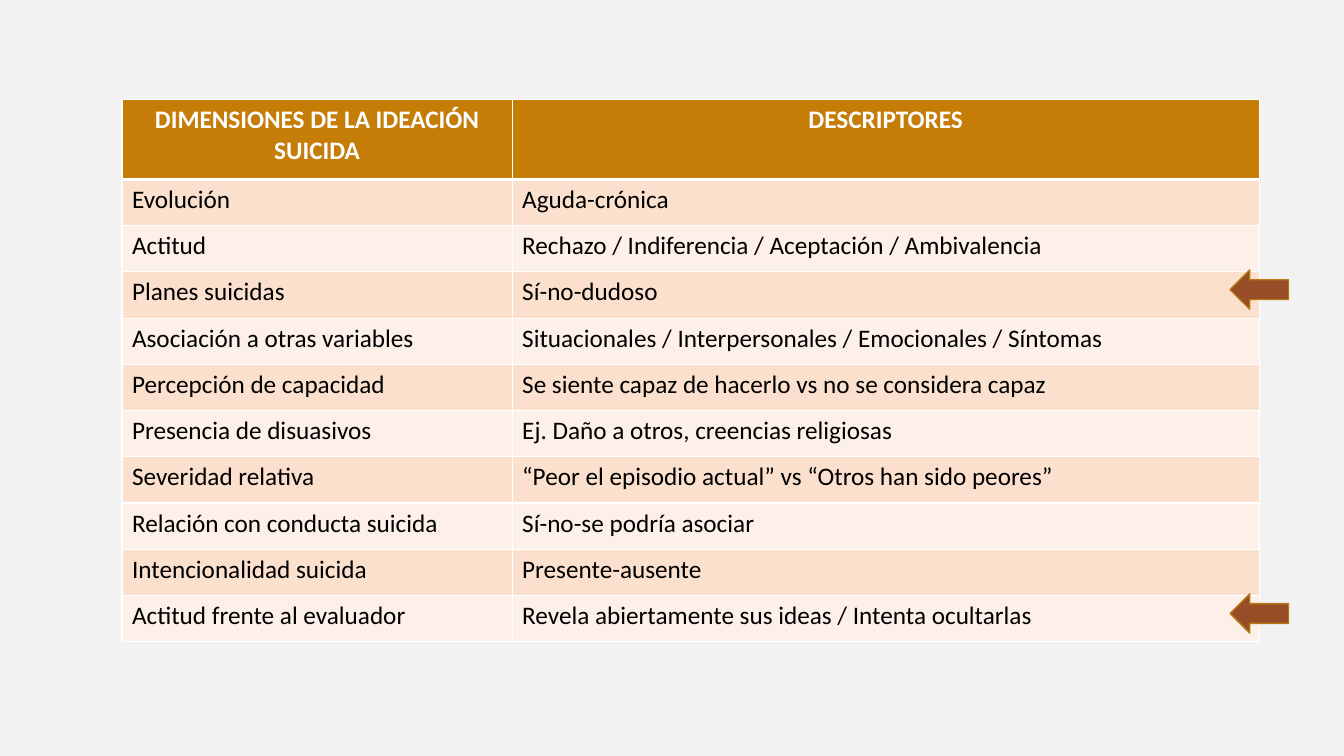
import pptx
import pptx.util
import pptx.dml.color
import pptx.enum.shapes
import pptx.enum.text
import pptx.oxml
import pptx.oxml.ns

HEAD = ("DIMENSIONES DE LA IDEACIÓN SUICIDA", "DESCRIPTORES")
ROWS = [
    ("Evolución", "Aguda-crónica"),
    ("Actitud", "Rechazo / Indiferencia / Aceptación / Ambivalencia"),
    ("Planes suicidas", "Sí-no-dudoso"),
    ("Asociación a otras variables", "Situacionales / Interpersonales / Emocionales / Síntomas"),
    ("Percepción de capacidad", "Se siente capaz de hacerlo vs no se considera capaz"),
    ("Presencia de disuasivos", "Ej. Daño a otros, creencias religiosas"),
    ("Severidad relativa", "“Peor el episodio actual” vs “Otros han sido peores”"),
    ("Relación con conducta suicida", "Sí-no-se podría asociar"),
    ("Intencionalidad suicida", "Presente-ausente"),
    ("Actitud frente al evaluador", "Revela abiertamente sus ideas / Intenta ocultarlas"),
]
MARKED = ("Planes suicidas", "Actitud frente al evaluador")
BANDS = ("FBE0CD", "FDF0E8")
COLS = (3.87, 7.41)
LEFT, TOP, HIGH, HEAD_H = 1.21, 0.99, 5.38, 0.79
ROW_H = (HIGH - HEAD_H) / len(ROWS)
BASE = {"name": "Calibri", "size": pptx.util.Pt(18)}
Inches = pptx.util.Inches


def paint(form, tint):
    form.solid()
    form.fore_color.rgb = pptx.dml.color.RGBColor.from_string(tint)


def edge(cell, side, width):
    line = pptx.oxml.parse_xml(
        f'<a:ln{side} {pptx.oxml.ns.nsdecls("a")} w="{pptx.util.Pt(width)}">'
        '<a:solidFill><a:srgbClr val="FFFFFF"/></a:solidFill>'
        f'</a:ln{side}>')
    cell._tc.get_or_add_tcPr().append(line)


def write(cell, text, row):
    head = row == 0
    for side in "LRTB":
        thick = (side == "B" and head) or (side == "T" and row == 1)
        edge(cell, side, 3 if thick else 1)
    paint(cell.fill, "C67D08" if head else BANDS[(row - 1) % 2])
    cell.text = text
    para = cell.text_frame.paragraphs[0]
    if head:
        para.alignment = pptx.enum.text.PP_ALIGN.CENTER
    font = para.runs[0].font
    for key, value in {**BASE, "bold": head}.items():
        setattr(font, key, value)
    paint(font.fill, "FFFFFF" if head else "000000")


def point(slide, row):
    top = TOP + HEAD_H + row * ROW_H - 0.02
    arrow = slide.shapes.add_shape(
        pptx.enum.shapes.MSO_SHAPE.RIGHT_ARROW,
        Inches(12.2), Inches(top), Inches(0.58), Inches(0.39))
    arrow.rotation = 180
    arrow.shadow.inherit = False
    paint(arrow.fill, "974D25")
    paint(arrow.line.fill, "B67815")
    arrow.line.width = pptx.util.Pt(1)


def main():
    deck = pptx.Presentation()
    deck.slide_width, deck.slide_height = Inches(13.33), Inches(7.5)
    slide = deck.slides.add_slide(deck.slide_layouts[6])
    paint(slide.background.fill, "F2F2F2")
    lines = [HEAD, *ROWS]
    grid = slide.shapes.add_table(
        len(lines), len(COLS), Inches(LEFT), Inches(TOP),
        Inches(sum(COLS)), Inches(HIGH)).table
    for col, width in zip(grid.columns, COLS):
        col.width = Inches(width)
    for row, texts in enumerate(lines):
        grid.rows[row].height = Inches(ROW_H if row else HEAD_H)
        for col, text in enumerate(texts):
            write(grid.cell(row, col), text, row)
    for row, (name, _) in enumerate(ROWS):
        if name in MARKED:
            point(slide, row)
    deck.save("out.pptx")


if __name__ == "__main__":
    main()
